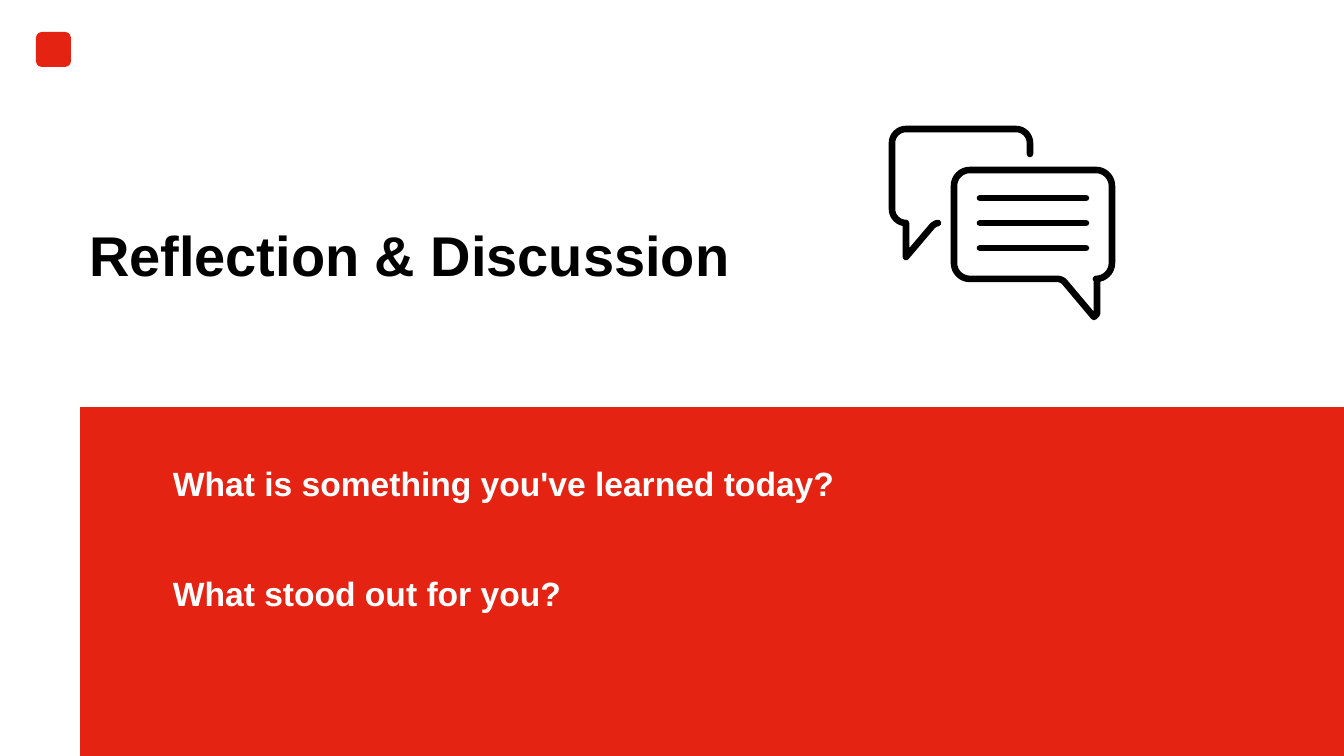
from math import cos, hypot, pi, sin
from typing import NamedTuple

from lxml import etree
from pptx import Presentation
from pptx import util as u
from pptx.dml.color import RGBColor
from pptx.enum import shapes, text
from pptx.oxml.ns import qn

WIDTH, HEIGHT = 1344, 756
PX = u.Inches(7.5) / HEIGHT
RED = RGBColor(0xE4, 0x23, 0x13)
WHITE = RGBColor(0xFF, 0xFF, 0xFF)
BLACK = RGBColor(0, 0, 0)
STROKE = u.Pt(4.7)
ARC_STEPS = 8


class Box(NamedTuple):
    left: int
    top: int
    width: int
    height: int


class Block(NamedTuple):
    kind: shapes.MSO_SHAPE
    box: Box
    color: RGBColor


class Corner(NamedTuple):
    x: int
    y: int
    radius: int = 0


class Bubble(NamedTuple):
    corners: list[Corner]
    closed: bool


MARGIN = Block(shapes.MSO_SHAPE.RECTANGLE, Box(0, 0, 80, HEIGHT), WHITE)
HEADER = Block(shapes.MSO_SHAPE.RECTANGLE, Box(0, 0, WIDTH, 407), WHITE)
LOGO = Block(shapes.MSO_SHAPE.ROUNDED_RECTANGLE, Box(36, 32, 35, 35), RED)
TITLE = Box(79, 223, 868, 71)
QUESTIONS_BOX = Box(163, 458, 819, 160)
QUESTIONS = ["What is something you've learned today?", "What stood out for you?"]

BUBBLES = [
    Bubble([Corner(1030, 154), Corner(1030, 129, 14), Corner(892, 129, 14),
            Corner(892, 223, 14), Corner(906, 223), Corner(906, 257),
            Corner(934, 224, 3), Corner(938, 223)], closed=False),
    Bubble([Corner(954, 170, 16), Corner(1112, 170, 16), Corner(1112, 279, 16),
            Corner(1097, 279), Corner(1097, 314), Corner(1094, 317),
            Corner(1062, 279, 4), Corner(954, 279, 16)], closed=True),
]
BUBBLE_LINES = range(198, 249, 25)


def px(value: float) -> u.Emu:
    return u.Emu(round(value * PX))


def emu_box(box: Box) -> list[u.Emu]:
    return [px(v) for v in box]


def add_block(slide, block: Block) -> None:
    sp = slide.shapes.add_shape(block.kind, *emu_box(block.box))
    sp.shadow.inherit = False
    sp.fill.solid()
    sp.fill.fore_color.rgb = block.color
    sp.line.fill.background()


def style_stroke(sp) -> None:
    """Give a shape or connector a thick black line with round ends and joins."""
    sp.line.color.rgb = BLACK
    sp.line.width = STROKE
    ln = sp.line._get_or_add_ln()
    ln.set("cap", "rnd")
    etree.SubElement(ln, qn("a:round"))


def rounded_points(corners: list[Corner]) -> list[tuple[int, int]]:
    """Trace the corners, replacing each one that has a radius by an arc."""
    points = []
    for i, c in enumerate(corners):
        if not c.radius:
            points.append((px(c.x), px(c.y)))
            continue
        offsets = []
        for end in (corners[i - 1], corners[(i + 1) % len(corners)]):
            dx, dy = end.x - c.x, end.y - c.y
            k = c.radius / hypot(dx, dy)
            offsets.append((dx * k, dy * k))
        (ax, ay), (bx, by) = offsets
        for step in range(ARC_STEPS + 1):
            t = pi / 2 * step / ARC_STEPS
            a, b = 1 - sin(t), 1 - cos(t)
            points.append((px(c.x + ax * a + bx * b), px(c.y + ay * a + by * b)))
    return points


def add_bubble(slide, bubble: Bubble) -> None:
    start, *rest = rounded_points(bubble.corners)
    builder = slide.shapes.build_freeform(*start, scale=1.0)
    builder.add_line_segments(rest, close=bubble.closed)
    sp = builder.convert_to_shape()
    sp.shadow.inherit = False
    sp.fill.background()
    style_stroke(sp)


def add_bubble_line(slide, y: int) -> None:
    line = slide.shapes.add_connector(
        shapes.MSO_CONNECTOR.STRAIGHT, px(980), px(y), px(1086), px(y))
    style_stroke(line)
    etree.SubElement(line._element.spPr, qn("a:effectLst"))


def style_font(p, size: int, color: RGBColor) -> None:
    p.alignment = text.PP_ALIGN.LEFT
    p.font.name = "Arial"
    p.font.size = u.Pt(size)
    p.font.bold = True
    p.font.color.rgb = color


def set_title(slide) -> None:
    """Fill the title placeholder and bring it in front of the header block."""
    title = slide.shapes.title
    slide.shapes._spTree.append(title._element)
    title.left, title.top, title.width, title.height = emu_box(TITLE)
    tf = title.text_frame
    tf.text = "Reflection & Discussion"
    tf.auto_size = text.MSO_AUTO_SIZE.NONE
    tf.vertical_anchor = text.MSO_ANCHOR.BOTTOM
    p = tf.paragraphs[0]
    p.line_spacing = 0.9
    style_font(p, 40, BLACK)


def add_questions(slide) -> None:
    tf = slide.shapes.add_textbox(*emu_box(QUESTIONS_BOX)).text_frame
    tf.word_wrap = True
    for i, question in enumerate(QUESTIONS):
        p = tf.add_paragraph() if i else tf.paragraphs[0]
        p.text = question
        if i:
            p.space_before = u.Pt(49.5)
        style_font(p, 24, WHITE)


def main() -> None:
    prs = Presentation()
    prs.slide_width, prs.slide_height = px(WIDTH), px(HEIGHT)
    slide = prs.slides.add_slide(prs.slide_layouts.get_by_name("Title Only"))
    slide.background.fill.solid()
    slide.background.fill.fore_color.rgb = RED
    for block in (MARGIN, HEADER, LOGO):
        add_block(slide, block)
    set_title(slide)
    add_questions(slide)
    for bubble in BUBBLES:
        add_bubble(slide, bubble)
    for y in BUBBLE_LINES:
        add_bubble_line(slide, y)
    prs.save("out.pptx")


if __name__ == "__main__":
    main()
